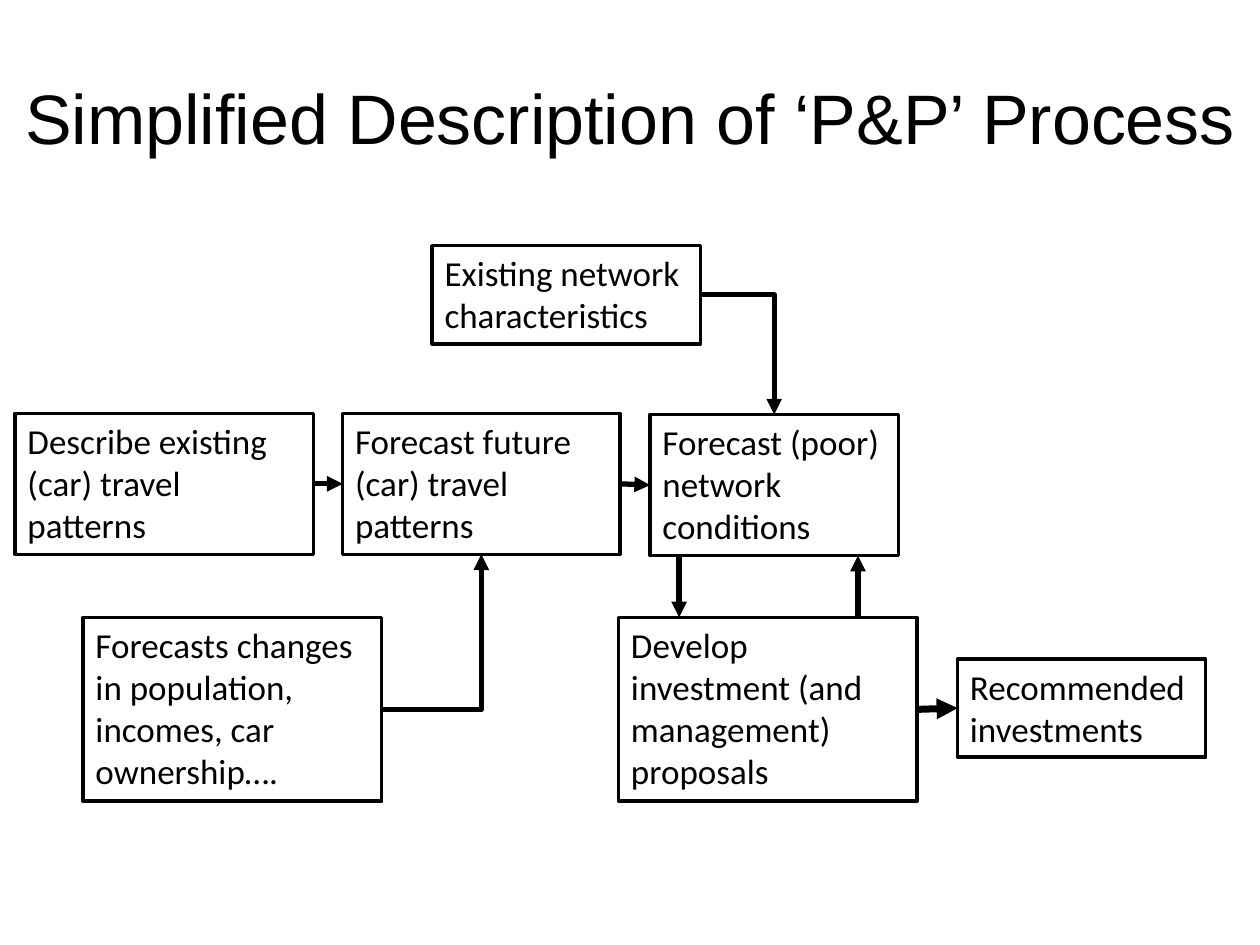
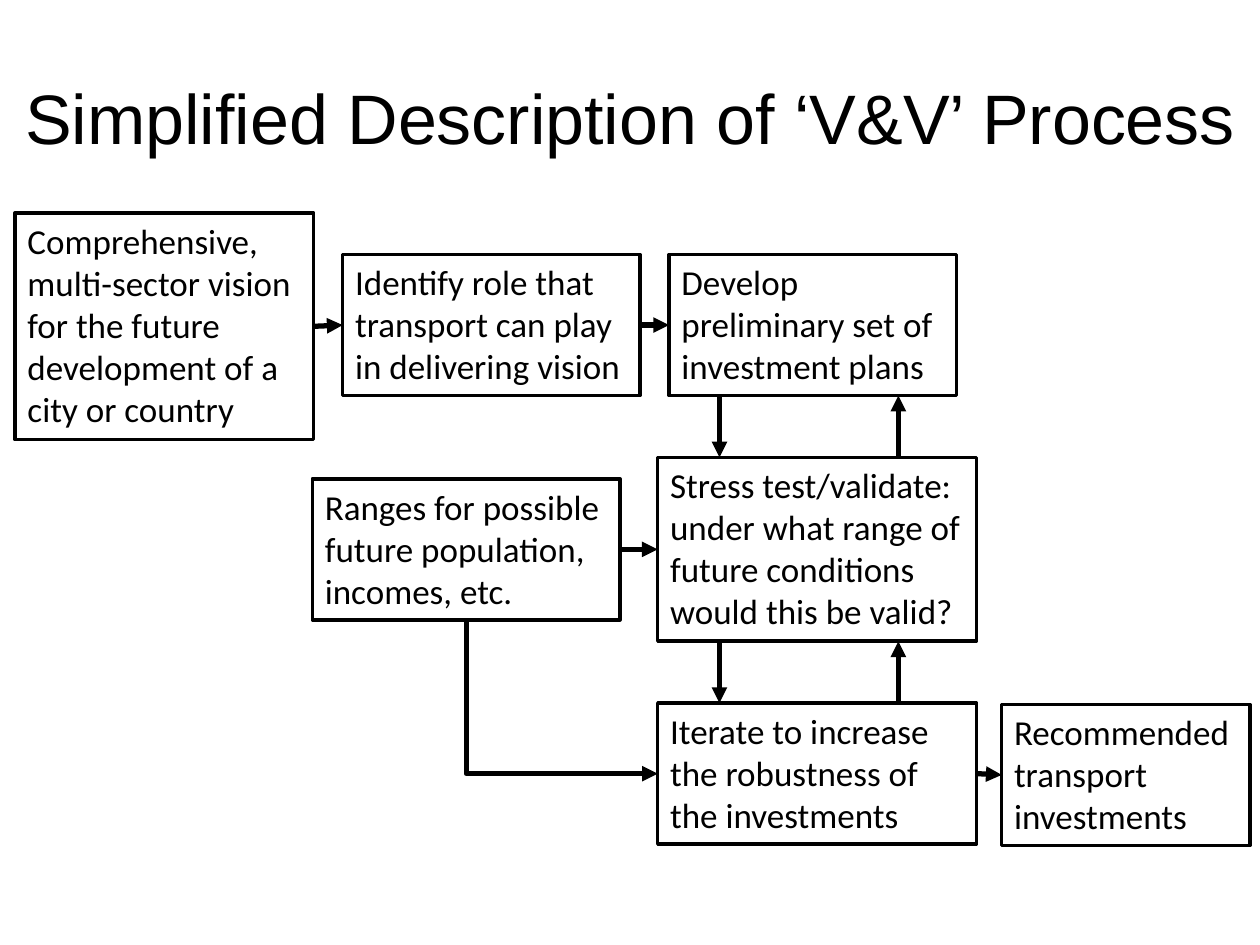
from lxml.etree import SubElement
from pptx import Presentation
from pptx.dml.color import RGBColor
from pptx.enum.shapes import MSO_CONNECTOR, MSO_SHAPE
from pptx.enum.text import MSO_ANCHOR, MSO_AUTO_SIZE, PP_ALIGN
from pptx.oxml.ns import qn
from pptx.util import Inches, Pt

COLORS = {"ink": "000000", "paper": "FFFFFF"}
TITLE_FONT, BOX_FONT = "Arial", "Calibri"
TOP, LEFT, BOTTOM, RIGHT = range(4)
LINE_HEIGHT, BOX_PADDING = 0.34, 0.1


class FlowDeck:
    def __init__(self):
        self.presentation = Presentation()
        self.presentation.slide_width = Inches(10)
        self.presentation.slide_height = Inches(7.5)
        self.ink = RGBColor.from_string(COLORS["ink"])
        self.slide = None

    def add_text(self, frame, text, font, size, alignment, anchor):
        frame.word_wrap = True
        frame.vertical_anchor = anchor
        paragraph = frame.paragraphs[0]
        paragraph.alignment = alignment
        run = paragraph.add_run()
        run.text = text
        run.font.name = font
        run.font.size = Pt(size)
        run.font.color.rgb = self.ink

    def start_slide(self, heading):
        self.slide = self.presentation.slides.add_slide(self.presentation.slide_layouts[5])
        background = self.slide.background.fill
        background.solid()
        background.fore_color.rgb = RGBColor.from_string(COLORS["paper"])
        title = self.slide.shapes.title
        title.left, title.top = Inches(0), Inches(0.3)
        title.width, title.height = Inches(10), Inches(1.25)
        title.text_frame.auto_size = MSO_AUTO_SIZE.NONE
        self.add_text(title.text_frame, heading, TITLE_FONT, 40,
                      PP_ALIGN.CENTER, MSO_ANCHOR.MIDDLE)

    def step(self, text, left, top, width, lines):
        height = lines * LINE_HEIGHT + BOX_PADDING
        box = self.slide.shapes.add_shape(
            MSO_SHAPE.RECTANGLE, Inches(left), Inches(top), Inches(width), Inches(height))
        box.shadow.inherit = False
        box.fill.background()
        box.line.color.rgb = self.ink
        box.line.width = Pt(2)
        self.add_text(box.text_frame, text, BOX_FONT, 20, PP_ALIGN.LEFT, MSO_ANCHOR.TOP)
        box.text_frame.auto_size = MSO_AUTO_SIZE.SHAPE_TO_FIT_TEXT
        return box

    def arrow(self, kind, start, end, weight=3):
        connector = self.slide.shapes.add_connector(kind, *start, *end)
        connector.line.color.rgb = self.ink
        connector.line.width = Pt(weight)
        properties = connector._element.spPr
        SubElement(properties.find(qn("a:ln")), qn("a:tailEnd"), type="triangle")
        SubElement(properties, qn("a:effectLst"))
        return connector

    def join(self, source, source_side, target, target_side,
             kind=MSO_CONNECTOR.STRAIGHT, weight=3):
        connector = self.arrow(kind, (0, 0), (0, 0), weight)
        connector.begin_connect(source, source_side)
        connector.end_connect(target, target_side)
        return connector

    def flow(self, source, target, weight=3):
        self.join(source, RIGHT, target, LEFT, weight=weight)

    def bend(self, source, source_side, target, target_side):
        connector = self.join(source, source_side, target, target_side, MSO_CONNECTOR.ELBOW)
        properties = connector._element.spPr
        properties.find(qn("a:prstGeom")).set("prst", "bentConnector2")
        if source_side == BOTTOM:
            width, height = connector.width, connector.height
            shift = (width - height) // 2
            connector.left += shift
            connector.top -= shift
            connector.width, connector.height = height, width
            transform = properties.find(qn("a:xfrm"))
            transform.set("rot", "16200000")
            transform.set("flipH", "1")

    def feedback(self, upper, lower, down_x, up_x):
        upper_edge, lower_edge = upper.top + upper.height, lower.top
        for x, start, end in ((down_x, upper_edge, lower_edge), (up_x, lower_edge, upper_edge)):
            self.arrow(MSO_CONNECTOR.STRAIGHT, (Inches(x), start), (Inches(x), end))


def build_predict_slide(deck):
    deck.start_slide("Simplified Description of ‘P&P’ Process")
    existing_travel = deck.step("Describe existing (car) travel patterns", 0.12, 3.28, 2.37, 3)
    future_travel = deck.step("Forecast future (car) travel patterns", 2.72, 3.28, 2.2, 3)
    changes = deck.step(
        "Forecasts changes in population, incomes, car ownership….", 0.66, 4.9, 2.37, 4)
    conditions = deck.step("Forecast (poor) network conditions", 5.16, 3.29, 1.97, 3)
    proposals = deck.step(
        "Develop investment (and management) proposals", 4.91, 4.9, 2.37, 4)
    recommended = deck.step("Recommended investments", 7.6, 5.23, 1.97, 2)
    network = deck.step("Existing network characteristics", 3.43, 1.95, 2.13, 2)

    deck.flow(existing_travel, future_travel)
    deck.flow(future_travel, conditions)
    deck.flow(proposals, recommended, weight=4)
    deck.bend(changes, RIGHT, future_travel, BOTTOM)
    deck.bend(network, RIGHT, conditions, TOP)
    deck.feedback(conditions, proposals, 5.39, 6.81)


def build_validate_slide(deck):
    deck.start_slide("Simplified Description of ‘V&V’ Process")
    vision = deck.step(
        "Comprehensive, multi-sector vision for the future development of a city or country",
        0.12, 1.69, 2.37, 5)
    role = deck.step(
        "Identify role that transport can play in delivering vision", 2.72, 2.02, 2.36, 3)
    ranges = deck.step(
        "Ranges for possible future population, incomes, etc.", 2.48, 3.8, 2.44, 3)
    plans = deck.step("Develop preliminary set of investment plans", 5.31, 2.02, 2.28, 3)
    stress_test = deck.step(
        "Stress test/validate: under what range of future conditions would this be valid?",
        5.22, 3.63, 2.53, 4)
    recommended = deck.step("Recommended transport investments", 7.95, 5.59, 1.97, 3)
    iteration = deck.step(
        "Iterate to increase the robustness of the investments", 5.22, 5.58, 2.53, 3)

    for source, target in ((vision, role), (role, plans), (ranges, stress_test),
                           (iteration, recommended)):
        deck.flow(source, target)
    for upper, lower in ((plans, stress_test), (stress_test, iteration)):
        deck.feedback(upper, lower, 5.71, 7.13)
    deck.bend(ranges, BOTTOM, iteration, LEFT)


def main():
    deck = FlowDeck()
    build_predict_slide(deck)
    build_validate_slide(deck)
    deck.presentation.save("out.pptx")


if __name__ == "__main__":
    main()
